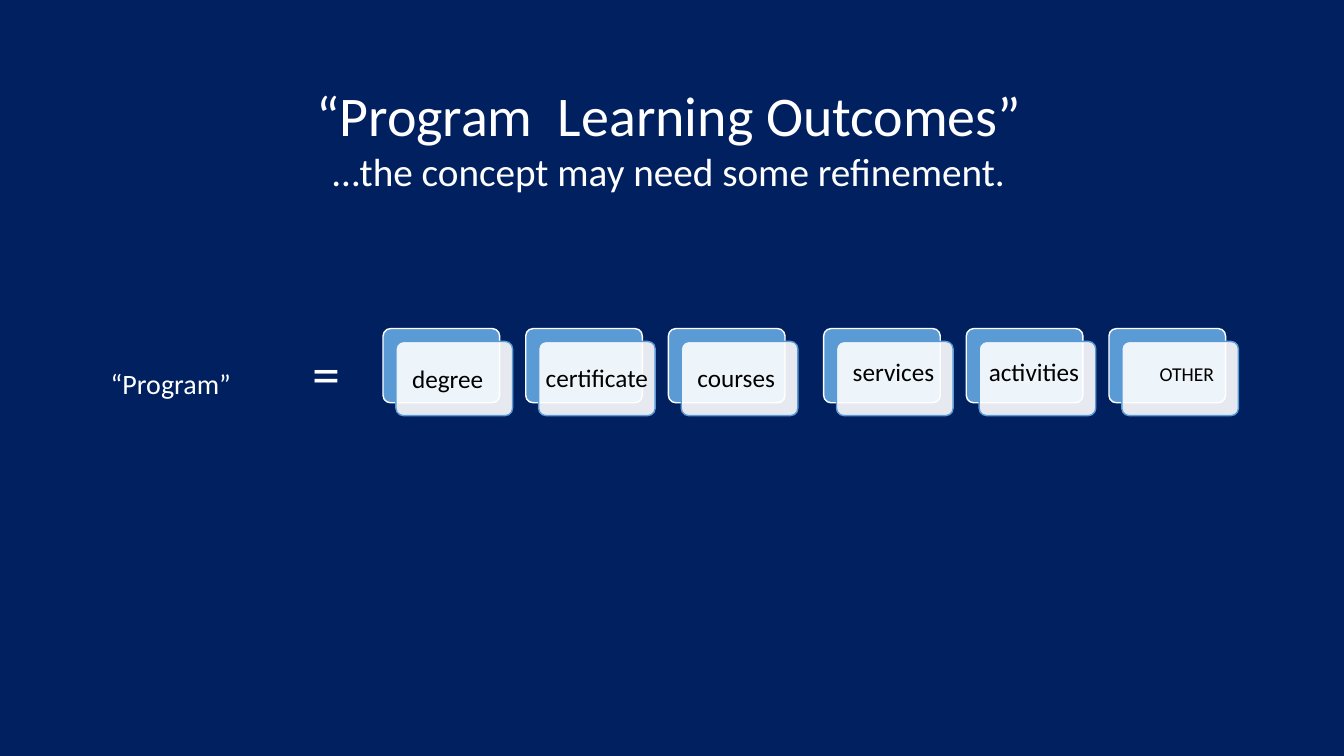
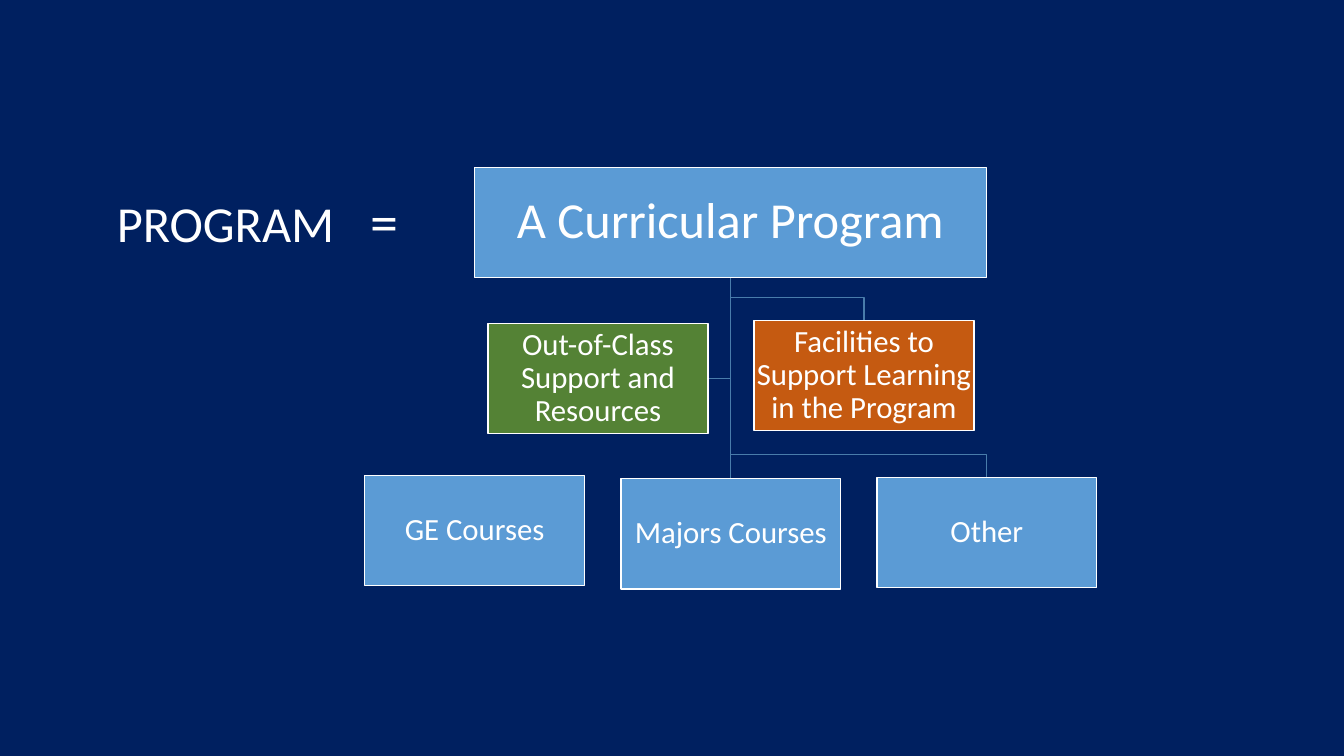
from lxml import etree
from pptx import Presentation
from pptx.dml.color import RGBColor
from pptx.enum import shapes, text
from pptx.oxml.ns import qn
from pptx.util import Pt

FONT = "Calibri"
COLORS = {
    "navy": "002060", "white": "FFFFFF", "black": "000000", "blue": "5B9BD5",
    "orange": "C55A11", "green": "548235", "branch": "497CAB",
}
LEFT, CENTER = text.PP_ALIGN.LEFT, text.PP_ALIGN.CENTER

# Slide 1: paragraphs are lists of (text, size) runs
TITLE = [[("“Program  Learning Outcomes”", 40)],
         [("…the concept may need some refinement.", 28)]]
PROGRAM_IS = [[("“Program”\t", 20), ("=", 40)]]
CARD_TOP, CARD_W, CARD_H = 234.7, 83.3, 53
CARD_STEP, CARD_OFFSET = 101.9, 9.2
# left edge of each card group, then (label, dx, dy, width, size, alignment)
CARD_GROUPS = [
    (273.6, [("degree", 13.7, 20.9, 74, 18, LEFT),
             ("certificate", 7.2, 20.2, 92, 18, LEFT),
             ("courses", 13.7, 20.2, 74, 18, LEFT)]),
    (588.3, [("services", 13.7, 16.6, 74, 18, LEFT),
             ("activities", 9, 16.6, 84, 18, LEFT),
             ("OTHER", 18.7, 20.2, 74, 14, CENTER)]),
]

# Slide 2
CURRICULUM_IS = [[("PROGRAM\t", 36), ("=", 40)]]
BOX_W, BOX_H = 157, 78.6
ROOT = ("A Curricular Program", 339.1, 119.5, 365.4)
PARTS = [
    ("Facilities to Support Learning in the Program", 538.6, 229, "orange"),
    ("Majors Courses", 443.5, 342, "blue"),
    ("Other", 626.4, 341.1, "blue"),
    ("Out-of-Class Support and Resources", 348.6, 231.1, "green"),
    ("GE Courses", 260.5, 339.8, "blue"),
]
TRUNK_X, TRUNK_TOP = 521.8, ROOT[2] + BOX_H
BRANCHES = [
    [(TRUNK_X, 270.4), (348.6 + BOX_W, 270.4)],
    [(TRUNK_X, 324.5), (704.7, 324.5), (704.7, 341.1)],
    [(TRUNK_X, 342)],
    [(TRUNK_X, 212.4), (617.1, 212.4), (617.1, 229)],
]


def rgb(name):
    return RGBColor.from_string(COLORS[name])


def add_slide(prs):
    slide = prs.slides.add_slide(prs.slide_layouts[6])
    slide.background.fill.solid()
    slide.background.fill.fore_color.rgb = rgb("navy")
    return slide


def style_font(paragraph, size, color):
    font = paragraph.font
    font.name, font.size, font.color.rgb = FONT, Pt(size), rgb(color)


def add_text(slide, paragraphs, left, top, width, height,
             color="white", align=LEFT, tab=None):
    box = slide.shapes.add_textbox(Pt(left), Pt(top), Pt(width), Pt(height))
    frame = box.text_frame
    frame.word_wrap = True
    for i, runs in enumerate(paragraphs):
        paragraph = frame.add_paragraph() if i else frame.paragraphs[0]
        paragraph.alignment = align
        style_font(paragraph, runs[0][1], color)
        for words, size in runs:
            run = paragraph.add_run()
            run.text = words
            if size != runs[0][1]:
                run.font.size = Pt(size)
        if tab:
            tabs = etree.Element(qn("a:tabLst"))
            etree.SubElement(tabs, qn("a:tab"), pos=str(Pt(tab)), algn="l")
            paragraph.font  # the tab list must precede the default run format
            paragraph._p.get_or_add_pPr().insert(0, tabs)


def add_box(slide, left, top, width, height, fill, line="white", rounded=False):
    kind = shapes.MSO_SHAPE.ROUNDED_RECTANGLE if rounded else shapes.MSO_SHAPE.RECTANGLE
    box = slide.shapes.add_shape(kind, Pt(left), Pt(top), Pt(width), Pt(height))
    if rounded:
        box.adjustments[0] = 0.1
    box.shadow.inherit = False
    box.fill.solid()
    box.fill.fore_color.rgb = rgb(fill)
    box.line.color.rgb = rgb(line)
    box.line.width = Pt(1)
    return box


def add_card(slide, left):
    """Blue rounded back with a slightly transparent white front."""
    add_box(slide, left, CARD_TOP, CARD_W, CARD_H, "blue", rounded=True)
    front = add_box(slide, left + CARD_OFFSET, CARD_TOP + CARD_OFFSET,
                    CARD_W, CARD_H, "white", "blue", rounded=True)
    tint = front._element.spPr.find(qn("a:solidFill")).find(qn("a:srgbClr"))
    etree.SubElement(tint, qn("a:alpha"), val="90000")


def add_chart_box(slide, words, left, top, width, fill, size, inset):
    frame = add_box(slide, left, top, width, BOX_H, fill).text_frame
    frame.word_wrap = True
    frame.vertical_anchor = text.MSO_ANCHOR.MIDDLE
    frame.margin_left = frame.margin_right = Pt(inset)
    frame.margin_top = frame.margin_bottom = Pt(inset)
    paragraph = frame.paragraphs[0]
    paragraph.text = words
    paragraph.alignment = CENTER
    paragraph.line_spacing = 0.9
    style_font(paragraph, size, "white")


def add_branch(slide, points):
    """Line from the foot of the root box through the given points."""
    start = (Pt(TRUNK_X), Pt(TRUNK_TOP))
    stops = [(Pt(x), Pt(y)) for x, y in points]
    if len(stops) == 1:
        branch = slide.shapes.add_connector(
            shapes.MSO_CONNECTOR.STRAIGHT, *start, *stops[0])
        etree.SubElement(branch._element.spPr, qn("a:effectLst"))
    else:
        builder = slide.shapes.build_freeform(*start)
        builder.add_line_segments(stops, close=False)
        branch = builder.convert_to_shape()
        branch.shadow.inherit = False
        branch.fill.background()
    branch.line.color.rgb = rgb("branch")
    branch.line.width = Pt(1)


def build_concept(prs):
    slide = add_slide(prs)
    add_text(slide, TITLE, 49.7, 54, 856, 90, align=CENTER)
    add_text(slide, PROGRAM_IS, 72, 238.3, 197.3, 55.4, tab=144)
    for group_left, labels in CARD_GROUPS:
        for i, (label, dx, dy, width, size, align) in enumerate(labels):
            left = group_left + i * CARD_STEP
            add_card(slide, left)
            add_text(slide, [[(label, size)]], left + dx, CARD_TOP + dy,
                     width, 29, "black", align)


def build_curriculum(prs):
    slide = add_slide(prs)
    add_text(slide, CURRICULUM_IS, 76.3, 129.6, 250, 55.4, tab=181)
    for points in BRANCHES:
        add_branch(slide, points)
    add_chart_box(slide, *ROOT, "blue", 36, 2)
    for words, left, top, fill in PARTS:
        add_chart_box(slide, words, left, top, BOX_W, fill, 22, 1)


def main():
    prs = Presentation()
    prs.slide_width, prs.slide_height = Pt(960), Pt(540)
    build_concept(prs)
    build_curriculum(prs)
    prs.save("out.pptx")


if __name__ == "__main__":
    main()
